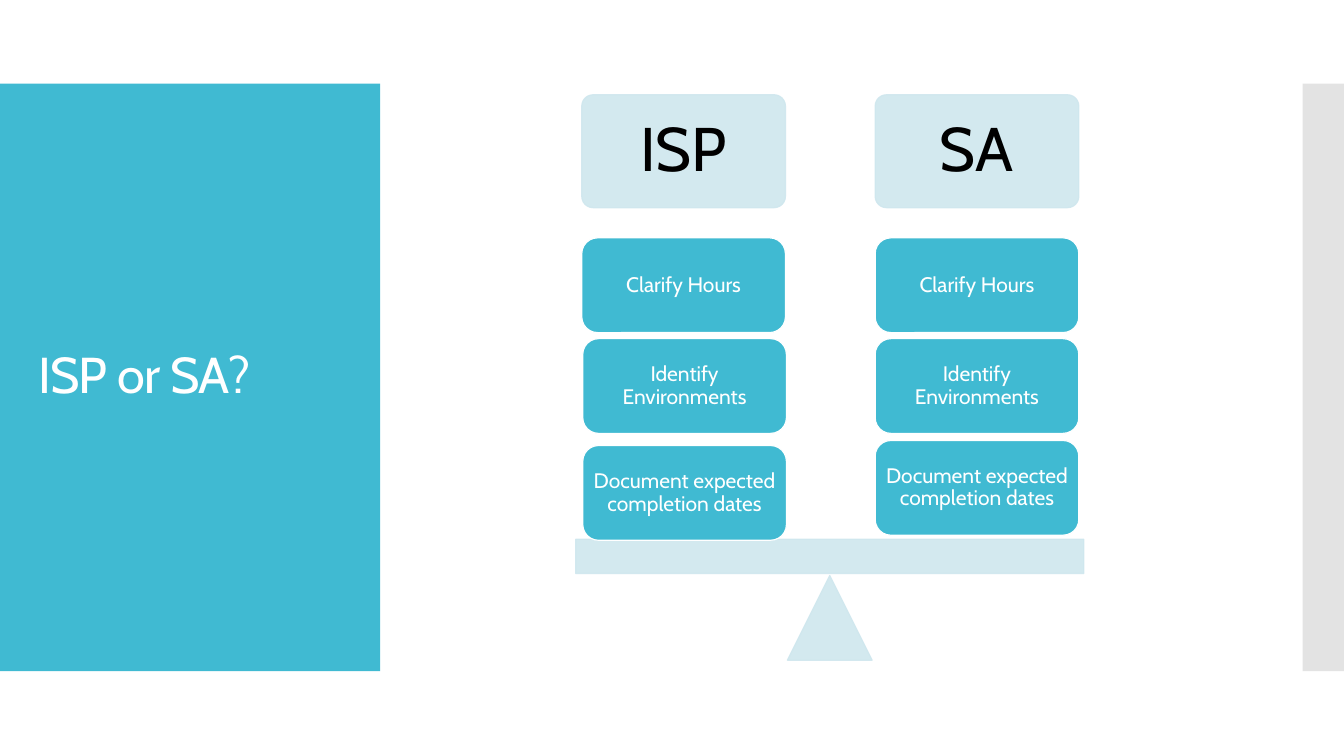
from dataclasses import dataclass

from lxml import etree
from pptx import Presentation
from pptx.dml.color import RGBColor
from pptx.enum.shapes import MSO_SHAPE
from pptx.enum.text import MSO_ANCHOR, PP_ALIGN
from pptx.oxml.ns import qn
from pptx.util import Inches, Pt

RECTANGLE = MSO_SHAPE.RECTANGLE
ROUNDED = MSO_SHAPE.ROUNDED_RECTANGLE
TRIANGLE = MSO_SHAPE.ISOSCELES_TRIANGLE
MIDDLE = MSO_ANCHOR.MIDDLE
CENTER, LEFT = PP_ALIGN.CENTER, PP_ALIGN.LEFT


@dataclass(frozen=True)
class Theme:
    font: str = "Cabin"
    teal: RGBColor = RGBColor(0x40, 0xBA, 0xD2)
    pale: RGBColor = RGBColor(0xCF, 0xE7, 0xEE)
    gray: RGBColor = RGBColor(0xC8, 0xC8, 0xC8)
    white: RGBColor = RGBColor(0xFF, 0xFF, 0xFF)
    black: RGBColor = RGBColor(0, 0, 0)
    title_size: Pt = Pt(36)
    header_size: Pt = Pt(44)
    block_size: Pt = Pt(15)
    outline: Pt = Pt(0.85)


theme = Theme()
deck = Presentation()
deck.slide_width, deck.slide_height = Inches(13.33), Inches(7.5)
page = deck.slides.add_slide(deck.slide_layouts[5])


def add_box(kind, left, top, width, height, fill, line=None, opacity=100):
    """Add a flat shape; opacity in percent applies to both fill and line."""
    box = page.shapes.add_shape(
        kind, Inches(left), Inches(top), Inches(width), Inches(height))
    box.shadow.inherit = False
    box.fill.solid()
    box.fill.fore_color.rgb = fill
    if line is None:
        box.line.fill.background()
    else:
        box.line.color.rgb = line
        box.line.width = theme.outline
    if opacity < 100:
        for color in box.element.spPr.iter(qn("a:srgbClr")):
            etree.SubElement(color, qn("a:alpha"), val=str(opacity * 1000))
    return box


def set_text(box, text, size, color, align, inset):
    frame = box.text_frame
    frame.word_wrap = True
    frame.vertical_anchor = MIDDLE
    frame.margin_left = frame.margin_right = Inches(inset)
    frame.margin_top = frame.margin_bottom = Inches(inset)
    para = frame.paragraphs[0]
    para.text = text
    para.alignment = align
    para.line_spacing = 0.9
    para.font.name = theme.font
    para.font.size = size
    para.font.color.rgb = color


# Side panels, with the title in front of them
add_box(RECTANGLE, 0, 0.83, 3.77, 5.83, theme.teal)
add_box(RECTANGLE, 12.92, 0.83, 0.41, 5.83, theme.gray, opacity=50)

title = page.shapes.title
title.left, title.top = Inches(0.28), Inches(1.23)
title.width, title.height = Inches(3.22), Inches(5.03)
set_text(title, "ISP or SA?", theme.title_size, theme.white, LEFT, 0.1)
title.text_frame.paragraphs[0].runs[0].font._element.set("spc", "-60")
title.element.getparent().append(title.element)

# Balance: fulcrum and beam
add_box(TRIANGLE, 7.81, 5.71, 0.84, 0.84, theme.pale, theme.pale, 90)
add_box(RECTANGLE, 5.71, 5.35, 5.04, 0.34, theme.pale, theme.pale, 90)

# Each side: header, its left edge, and the (left, top) of its stacked blocks
block_labels = ["Clarify Hours", "Identify Environments",
                "Document expected completion dates"]
sides = [
    ("ISP", 5.77, [(5.77, 2.36), (5.78, 3.36), (5.78, 4.42)]),
    ("SA", 8.68, [(8.68, 2.36), (8.68, 3.36), (8.68, 4.37)]),
]
for name, header_left, places in sides:
    header = add_box(ROUNDED, header_left, 0.94, 2.02, 1.12,
                     theme.pale, theme.pale, 90)
    header.adjustments[0] = 0.1
    set_text(header, name, theme.header_size, theme.black, CENTER, 0.18)
    for label, (left, top) in zip(block_labels, places):
        block = add_box(ROUNDED, left, top, 2.02, 0.94, theme.teal, theme.white)
        set_text(block, label, theme.block_size, theme.white, CENTER, 0.06)

deck.save("out.pptx")
